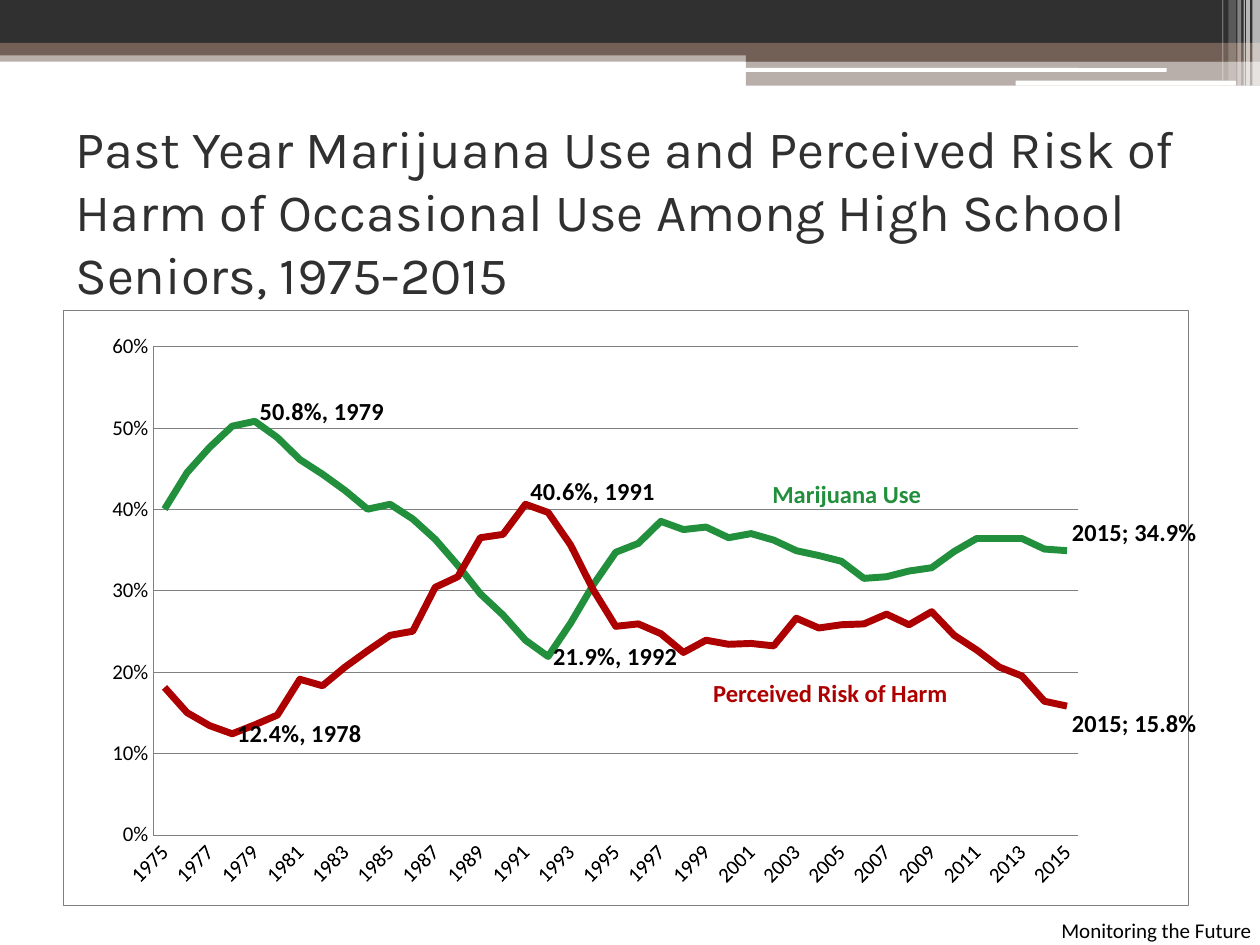
import pptx
import pptx.chart.data
import pptx.dml.color
import pptx.enum.chart
import pptx.enum.shapes
import pptx.enum.text
import pptx.oxml
import pptx.oxml.ns
import pptx.util

RGB = pptx.dml.color.RGBColor
DARK = RGB(0x30, 0x30, 0x30)
BROWN = RGB(0x72, 0x60, 0x56)
WHITE = RGB(0xFF, 0xFF, 0xFF)
BLACK = RGB(0x00, 0x00, 0x00)
GRAY = RGB(0x80, 0x80, 0x80)
GREEN = RGB(0x21, 0x8F, 0x3B)
RED = RGB(0xAD, 0x01, 0x01)
Pt = pptx.util.Pt
ALIGN = pptx.enum.text.PP_ALIGN

deck = pptx.Presentation()
deck.slide_width = pptx.util.Inches(10)
deck.slide_height = pptx.util.Inches(7.5)
slide = deck.slides.add_slide(deck.slide_layouts[6])
shapes = slide.shapes

# Grid of 100 columns by 75 rows
COL = deck.slide_width / 100
ROW = deck.slide_height / 75


def place(left, top, wide, high):
    return [round(n * unit) for n, unit in zip((left, top, wide, high), (COL, ROW) * 2)]


def write(spot, words, size, color, face="Calibri", bold=False, align=ALIGN.RIGHT):
    frame = shapes.add_textbox(*place(*spot)).text_frame
    frame.word_wrap = True
    frame.vertical_anchor = pptx.enum.text.MSO_ANCHOR.TOP
    line = frame.paragraphs[0]
    line.alignment = align
    run = line.add_run()
    run.text = words
    run.font.name, run.font.size, run.font.bold = face, Pt(size), bold
    run.font.color.rgb = color
    return frame


# Header bands and the stripes at the right: spot, colour, opacity, rounded
RECT = pptx.enum.shapes.MSO_SHAPE.RECTANGLE
ROUND = pptx.enum.shapes.MSO_SHAPE.ROUNDED_RECTANGLE
bands = [
    ((0, 4, 100, 0.9), BROWN, 50, RECT),
    ((0, 0, 100, 3.4), DARK, 100, RECT),
    ((0, 3.4, 100, 1), BROWN, 100, RECT),
    ((59.2, 3.9, 40.8, 1), BROWN, 100, RECT),
    ((59.2, 4.8, 40.8, 2), BROWN, 50, RECT),
    ((59.1, 5.4, 33.5, 0.3), WHITE, 100, ROUND),
    ((80.6, 6.4, 17.5, 0.4), WHITE, 100, ROUND),
]
stripes = [(99.4, 0.6, 6.8, 65), (98.9, 0.3, 6.8, 65), (98.7, 0.1, 6.8, 60),
           (98.2, 0.3, 6.8, 40), (97.5, 0.6, 6.4, 20), (97, 0.1, 6.4, 30)]
bands += [((left, 0, wide, high), WHITE, clear, RECT) for left, wide, high, clear in stripes]
for spot, color, clear, kind in bands:
    band = shapes.add_shape(kind, *place(*spot))
    band.shadow.inherit = False
    band.fill.solid()
    band.fill.fore_color.rgb = color
    band.line.fill.background()
    if clear < 100:
        tint = band._element.spPr.find(".//" + pptx.oxml.ns.qn("a:srgbClr"))
        pptx.oxml.ns.qn("a:alpha")
        tint.append(pptx.oxml.parse_xml(
            f'<a:alpha {pptx.oxml.ns.nsdecls("a")} val="{clear * 1000}"/>'))

# Title
title = write((5, 9.2, 90, 15),
              "Past Year Marijuana Use and Perceived Risk of Harm of Occasional Use "
              "Among High School Seniors, 1975-2015", 30, DARK, "Karla", align=ALIGN.LEFT)
title.vertical_anchor = pptx.enum.text.MSO_ANCHOR.MIDDLE

# Chart data, in percent
use = [40, 44.5, 47.6, 50.2, 50.8, 48.8, 46.1, 44.3, 42.3, 40, 40.6, 38.8, 36.3, 33.1,
       29.6, 27, 23.9, 21.9, 26, 30.7, 34.7, 35.8, 38.5, 37.5, 37.8, 36.5, 37, 36.2,
       34.9, 34.3, 33.6, 31.5, 31.7, 32.4, 32.8, 34.8, 36.4, 36.4, 36.4, 35.1, 34.9]
risk = [18.1, 15, 13.4, 12.4, 13.5, 14.7, 19.1, 18.3, 20.6, 22.6, 24.5, 25, 30.4, 31.7,
        36.5, 36.9, 40.6, 39.6, 35.6, 30.1, 25.6, 25.9, 24.7, 22.4, 23.9, 23.4, 23.5,
        23.2, 26.6, 25.4, 25.8, 25.9, 27.1, 25.8, 27.4, 24.5, 22.7, 20.6, 19.5, 16.4, 15.8]
data = pptx.chart.data.CategoryChartData(number_format="0.0%")
data.categories = [str(year) for year in range(1975, 2016)]
for name, rates in (("Series 1", use), ("Series 2", risk)):
    data.add_series(name, [round(rate / 100, 3) for rate in rates])
chart = shapes.add_chart(pptx.enum.chart.XL_CHART_TYPE.LINE,
                         *place(5, 24.6, 90, 47.3), data).chart
chart.has_legend = False
chart.has_title = False
chart.font.name, chart.font.size = "Calibri", Pt(10)
chart.font.color.rgb = BLACK

# Axes
rates, years = chart.value_axis, chart.category_axis
rates.minimum_scale, rates.maximum_scale, rates.major_unit = 0, 0.6, 0.1
rates.tick_labels.number_format = "0%"
rates.tick_labels.number_format_is_linked = False
for axis in (rates, years):
    axis.major_tick_mark = pptx.enum.chart.XL_TICK_MARK.NONE
    axis.tick_labels.font.size = Pt(12)
for edge in (rates.format.line, years.format.line, rates.major_gridlines.format.line):
    edge.color.rgb = GRAY
    edge.width = Pt(0.25)
years._element.find(".//" + pptx.oxml.ns.qn("a:bodyPr")).set("rot", "-2700000")
NS = pptx.oxml.ns.nsdecls("c", "a")
years._element.find(pptx.oxml.ns.qn("c:noMultiLvlLbl")).addprevious(
    pptx.oxml.parse_xml(f'<c:tickLblSkip {NS} val="2"/>'))

# Plot area and chart frame
plot = chart._chartSpace.chart.plotArea
for old in plot.findall(pptx.oxml.ns.qn("c:layout")):
    plot.remove(old)
plot.insert(0, pptx.oxml.parse_xml(
    f'<c:layout {NS}><c:manualLayout><c:layoutTarget val="inner"/>'
    '<c:xMode val="edge"/><c:yMode val="edge"/><c:x val="0.08"/><c:y val="0.061"/>'
    '<c:w val="0.822"/><c:h val="0.82"/></c:manualLayout></c:layout>'))
chart._chartSpace.chart.addnext(pptx.oxml.parse_xml(
    f'<c:spPr {NS}><a:solidFill><a:srgbClr val="{WHITE}"/></a:solidFill><a:ln w="3175">'
    f'<a:solidFill><a:srgbClr val="{GRAY}"/></a:solidFill></a:ln></c:spPr>'))

# Lines and point labels: point, words (none for year and value), shift down
marks = [
    (GREEN, [(4, "50.8%, 1979", -0.015), (17, "21.9%, 1992", 0), (40, None, -0.03)]),
    (RED, [(3, "12.4%, 1978", 0), (16, "40.6%, 1991", -0.02), (40, None, 0.03)]),
]
for line, (color, notes) in zip(chart.plots[0].series, marks):
    line.smooth = False
    line.format.line.color.rgb = color
    line.format.line.width = Pt(4)
    line.marker.style = pptx.enum.chart.XL_MARKER_STYLE.NONE
    line.data_labels.show_value = False
    for point, words, shift in notes:
        label = line.points[point].data_label
        if words:
            run = label.text_frame.paragraphs[0].add_run()
            run.text = words
            font = run.font
        else:
            font = label.font
        font.name, font.size, font.bold = "Calibri", Pt(14), True
        font.color.rgb = BLACK
        label.position = pptx.enum.chart.XL_LABEL_POSITION.RIGHT
        node = line._element.xpath(f'.//c:dLbl[c:idx/@val="{point}"]')[0]
        node.insert(1, pptx.oxml.parse_xml(
            f'<c:layout {NS}><c:manualLayout><c:x val="0"/><c:y val="{shift}"/>'
            '</c:manualLayout></c:layout>'))
        if not words:
            node.find(pptx.oxml.ns.qn("c:showCatName")).set("val", "1")
            node.append(pptx.oxml.parse_xml(f'<c:separator {NS}>; </c:separator>'))

# Line names and source
write((43.3, 37.5, 30.8, 3.5), "Marijuana Use", 14, GREEN, bold=True)
write((45.4, 53.3, 30.8, 3.5), "Perceived Risk of Harm", 14, RED, bold=True)
write((69.5, 72.3, 30.8, 3.5), "Monitoring the Future", 12, BLACK)

deck.save("out.pptx")
